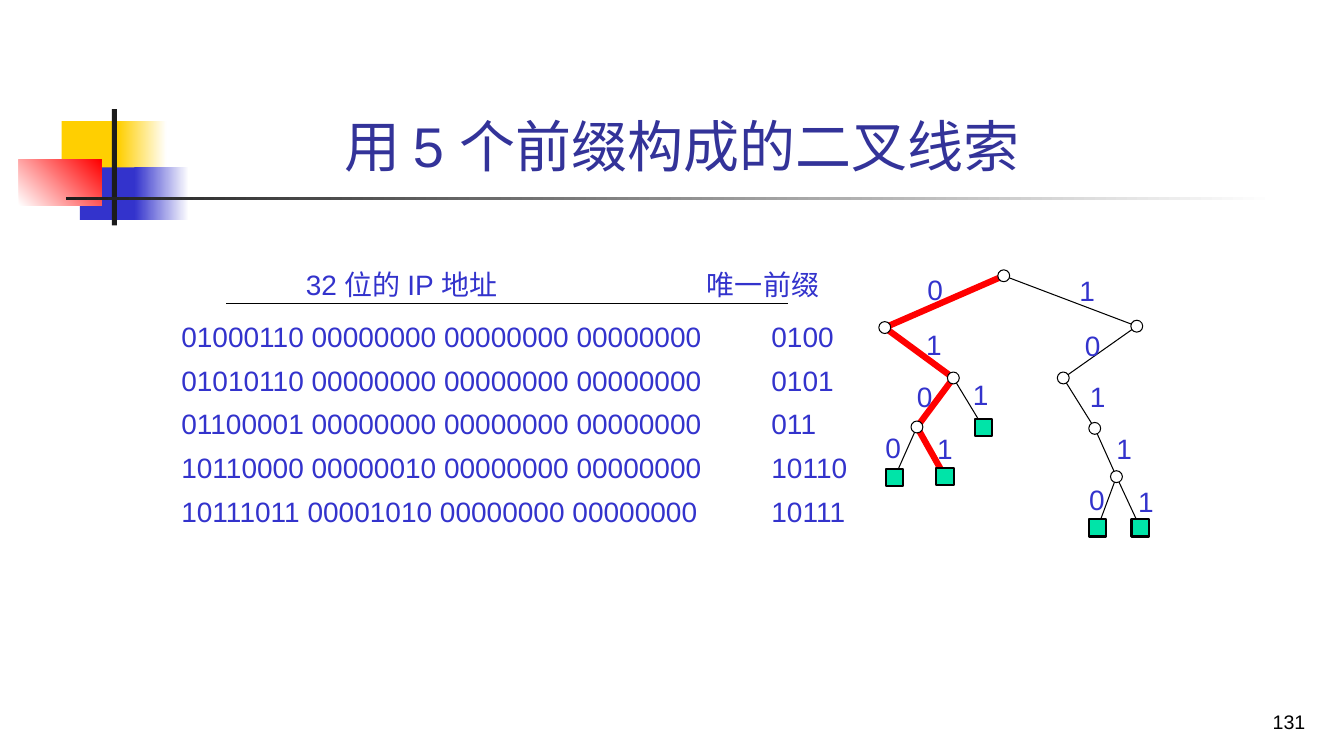
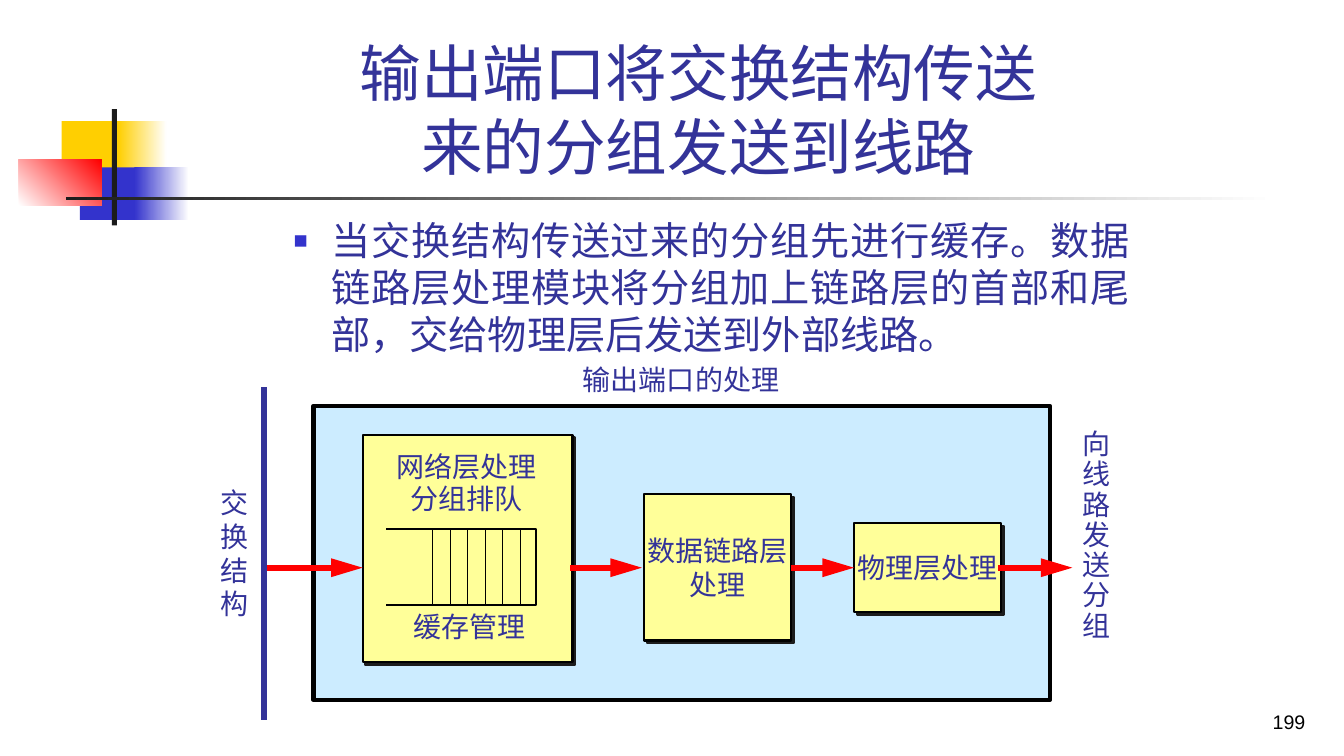
"""Build two networking slides: a binary prefix trie and the output port of a router."""
from lxml.etree import SubElement
from pptx import Presentation
from pptx.dml.color import RGBColor
from pptx.enum.shapes import MSO_CONNECTOR as LINK, MSO_SHAPE as PRESET
from pptx.enum.text import MSO_ANCHOR as ANCHOR, MSO_AUTO_SIZE as FIT, PP_ALIGN as ALIGN
from pptx.oxml.ns import qn
from pptx.util import Pt

FONT = "Arial"
BLACK = RGBColor(0x00, 0x00, 0x00)
WHITE = RGBColor(0xFF, 0xFF, 0xFF)
CHARCOAL = RGBColor(0x1C, 0x1C, 0x1C)
NAVY = RGBColor(0x33, 0x33, 0x99)
BLUE = RGBColor(0x33, 0x33, 0xCC)
GOLD = RGBColor(0xFF, 0xCF, 0x01)
RED = RGBColor(0xFF, 0x00, 0x00)
GREEN = RGBColor(0x00, 0xE4, 0xA8)
SKY = RGBColor(0xCC, 0xEC, 0xFF)
YELLOW = RGBColor(0xFF, 0xFF, 0x99)

ORNAMENTS = [
    ((44, 86.5, 46, 37.5), (GOLD,), 0),
    ((84.5, 86.5, 34.5, 37.5), (GOLD, WHITE), 0),
    ((57, 119.5, 44.5, 37.5), (BLUE,), 0),
    ((96, 119.5, 39, 37.5), (BLUE, WHITE), 0),
    ((13.5, 114, 59, 33), (WHITE, RED), 45),
    ((80, 78, 3.5, 83), (CHARCOAL,), 0),
    ((47, 140.5, 864, 2.5), (CHARCOAL, WHITE), 0),
]

TRIE = {
    "title": "用 5 个前缀构成的二叉线索",
    "page": "131",
    "header": ("32 位的 IP 地址", "唯一前缀"),
    "rows": [
        ("01000110 00000000 00000000 00000000", "0100"),
        ("01010110 00000000 00000000 00000000", "0101"),
        ("01100001 00000000 00000000 00000000", "011"),
        ("10110000 00000010 00000000 00000000", "10110"),
        ("10111011 00001010 00000000 00000000", "10111"),
    ],
}
SEARCH = "0101"
NODES = {
    "": (717, 197), "0": (632, 234), "01": (681, 270), "010": (655, 305),
    "0100": (639, 341), "0101": (675, 340.5), "011": (702.5, 305.5),
    "1": (812, 233), "10": (759.5, 270), "101": (782, 306),
    "1011": (797.5, 340.5), "10110": (784, 377), "10111": (814.5, 377),
}
BITS = {
    "0": (668, 206.5), "01": (667, 246), "010": (660.5, 283), "011": (700.5, 282),
    "0100": (638, 319.5), "0101": (675, 320), "1": (776.5, 207), "10": (780.5, 246.5),
    "101": (784, 283), "1011": (803, 320.5), "10110": (783.5, 357), "10111": (818.5, 358),
}

PORT = {
    "title": "输出端口将交换结构传送来的分组发送到线路",
    "page": "199",
    "body": "当交换结构传送过来的分组先进行缓存。数据链路层处理模块将分组加上链路层的首部和尾部，交给物理层后发送到外部线路。",
}
PANEL = (224, 290, 526, 210)
MODULES = [
    ((610, 373.5, 105, 63.5), ["物理层处理"]),
    ((460, 353, 105, 104.5), ["数据链路层", "处理"]),
    ((259, 310.5, 150, 162.5), []),
]
FLOW_Y = 405.5
FLOWS = [(713, 766), (565, 610), (407.5, 458.5), (188.5, 259)]
FABRIC = (188.5, 276.5, 188.5, 514)
QUEUE_LEFT, QUEUE_RIGHT, QUEUE_TOP, QUEUE_BOTTOM = 276.5, 383, 378, 432.5
SLOT_LEFT, SLOT_GAP, SLOT_COUNT = 309, 12.5, 6
CAPTIONS = [
    (333, 322.5, 140, ["网络层处理", "分组排队"], 0.95),
    (486.5, 259, 180, ["输出端口的处理"], 1),
    (783, 307.5, 34, list("向线路发送分组"), 0.9),
    (335.5, 435.5, 110, ["缓存管理"], 1),
    (167.5, 347, 34, list("交换结构"), 1),
]


def assign(target, values):
    for name, value in values.items():
        setattr(target, name, value)


def place(item, box):
    assign(item, dict(zip(("left", "top", "width", "height"), map(Pt, box))))


def write(shape, lines, size=20, color=NAVY, align=ALIGN.CENTER, anchor=ANCHOR.TOP,
          spacing=None, margins=(0, 0)):
    frame = shape.text_frame
    side, edge = map(Pt, margins)
    assign(frame, {"word_wrap": True, "auto_size": FIT.NONE, "vertical_anchor": anchor,
                   "margin_left": side, "margin_right": side,
                   "margin_top": edge, "margin_bottom": edge})
    for index, line in enumerate(lines):
        paragraph = frame.add_paragraph() if index else frame.paragraphs[0]
        assign(paragraph, {"alignment": align, "line_spacing": spacing})
        run = paragraph.add_run()
        run.text = line
        assign(run.font, {"name": FONT, "size": Pt(size)})
        run.font.color.rgb = color
    return frame.paragraphs


def add_label(slide, box, lines, **style):
    return write(slide.shapes.add_textbox(*map(Pt, box)), lines, **style)


def paint(shape, colors, angle=0, outline=None):
    shape.shadow.inherit = False
    if len(colors) == 1:
        shape.fill.solid()
        shape.fill.fore_color.rgb = colors[0]
    elif colors:
        shape.fill.gradient()
        shape.fill.gradient_angle = angle
        for stop, color in zip(shape.fill.gradient_stops, colors):
            stop.color.rgb = color
    else:
        shape.fill.background()
    if outline:
        shape.line.color.rgb = BLACK
        shape.line.width = Pt(outline)
    else:
        shape.line.fill.background()


def add_figure(slide, preset, box, colors, angle=0, outline=None):
    figure = slide.shapes.add_shape(preset, *map(Pt, box))
    paint(figure, colors, angle, outline)
    return figure


def add_line(slide, ends, color=BLACK, width=0.75, arrow=False):
    line = slide.shapes.add_connector(LINK.STRAIGHT, *map(Pt, ends))
    line.line.color.rgb = color
    line.line.width = Pt(width)
    properties = line.element.spPr
    if arrow:
        SubElement(properties.find(qn("a:ln")), qn("a:tailEnd"),
                   {"type": "triangle", "w": "med", "len": "lg"})
    SubElement(properties, qn("a:effectLst"))


def cast_shadow(shape):
    effects = shape.element.spPr.find(qn("a:effectLst"))
    shadow = SubElement(effects, qn("a:outerShdw"), {
        "blurRad": "0", "dist": str(Pt(2.8)), "dir": "2700000",
        "algn": "ctr", "rotWithShape": "0"})
    SubElement(shadow, qn("a:srgbClr"), val=str(CHARCOAL))


def set_tabs(paragraph, stops):
    tabs = SubElement(paragraph._p.get_or_add_pPr(), qn("a:tabLst"))
    for stop in stops:
        SubElement(tabs, qn("a:tab"), pos=str(Pt(stop)), algn="l")


def set_bullet(paragraph):
    properties = paragraph._p.get_or_add_pPr()
    properties.set("marL", str(Pt(27)))
    properties.set("indent", str(Pt(-27)))
    SubElement(SubElement(properties, qn("a:buClr")), qn("a:srgbClr"), val=str(BLUE))
    SubElement(properties, qn("a:buSzPct"), val="60000")
    SubElement(properties, qn("a:buFont"), typeface=FONT)
    SubElement(properties, qn("a:buChar"), char="■")


def add_slide(deck, layout, content, title_box, title_size):
    slide = deck.slides.add_slide(deck.slide_layouts[layout])
    place(slide.shapes.title, title_box)
    write(slide.shapes.title, [content["title"]], size=title_size,
          anchor=ANCHOR.BOTTOM, margins=(7.2, 3.6))
    add_label(slide, (732, 488, 200.5, 36), [content["page"]], size=14, color=BLACK,
              align=ALIGN.RIGHT, anchor=ANCHOR.BOTTOM)
    return slide


def decorate_master(deck, slide):
    for box, colors, angle in ORNAMENTS:
        ornament = add_figure(slide, PRESET.RECTANGLE, box, colors, angle)
        deck.slide_master.shapes.element.append(ornament.element)


def draw_addresses(slide):
    lines = ["\t" + "\t".join(TRIE["header"])] + ["\t".join(row) for row in TRIE["rows"]]
    header, *rows = add_label(slide, (129.5, 191, 480, 212), lines, color=BLUE,
                              align=ALIGN.LEFT, spacing=1.3)
    assign(header, {"line_spacing": 1.0, "space_after": Pt(6)})
    set_tabs(header, (89, 375.5))
    for row in rows:
        set_tabs(row, (421.5,))
    add_line(slide, (161.5, 216.5, 563, 216.5))


def draw_trie(slide):
    for prefix, center in NODES.items():
        if prefix:
            found = SEARCH.startswith(prefix)
            add_line(slide, NODES[prefix[:-1]] + center,
                     RED if found else BLACK, 4.5 if found else 0.75)
    for prefix, (x, y) in BITS.items():
        add_label(slide, (x - 10, y - 14, 20, 28), [prefix[-1]], color=BLUE,
                  anchor=ANCHOR.MIDDLE)
    leaves = {prefix for _, prefix in TRIE["rows"]}
    for prefix, (x, y) in NODES.items():
        leaf = prefix in leaves
        preset, size, color, outline = (
            (PRESET.RECTANGLE, 12.5, GREEN, 1.5) if leaf else (PRESET.OVAL, 8.5, WHITE, 0.75))
        add_figure(slide, preset, (x - size / 2, y - size / 2, size, size), (color,),
                   outline=outline)


def draw_queue(slide):
    builder = slide.shapes.build_freeform(QUEUE_LEFT, QUEUE_TOP, scale=Pt(1))
    builder.add_line_segments([(QUEUE_RIGHT, QUEUE_TOP), (QUEUE_RIGHT, QUEUE_BOTTOM),
                               (QUEUE_LEFT, QUEUE_BOTTOM)], close=False)
    paint(builder.convert_to_shape(), (), outline=1.5)
    for slot in range(SLOT_COUNT):
        x = SLOT_LEFT + slot * SLOT_GAP
        add_line(slide, (x, QUEUE_TOP, x, QUEUE_BOTTOM))


def draw_port(slide):
    body = slide.placeholders[1]
    place(body, (202.5, 151, 612, 109))
    paragraph, = write(body, [PORT["body"]], size=28, align=ALIGN.JUSTIFY, margins=(7.2, 3.6))
    set_bullet(paragraph)
    add_figure(slide, PRESET.RECTANGLE, PANEL, (SKY,), outline=3)
    for box, lines in MODULES:
        module = add_figure(slide, PRESET.RECTANGLE, box, (YELLOW,), outline=1.5)
        cast_shadow(module)
        write(module, lines, anchor=ANCHOR.MIDDLE)
    for start, end in FLOWS:
        add_line(slide, (start, FLOW_Y, end, FLOW_Y), RED, 4.5, arrow=True)
    add_line(slide, FABRIC, NAVY, 4.5)
    draw_queue(slide)
    for center, top, width, lines, spacing in CAPTIONS:
        add_label(slide, (center - width / 2, top, width, 24 * len(lines)), lines,
                  spacing=spacing)


def main():
    deck = Presentation()
    assign(deck, {"slide_width": Pt(960), "slide_height": Pt(540)})
    trie = add_slide(deck, 5, TRIE, (205, 16.5, 564, 115), 40)
    decorate_master(deck, trie)
    draw_addresses(trie)
    draw_trie(trie)
    draw_port(add_slide(deck, 1, PORT, (229, 73.5, 540, 60.5), 44))
    deck.save("out.pptx")


if __name__ == "__main__":
    main()
